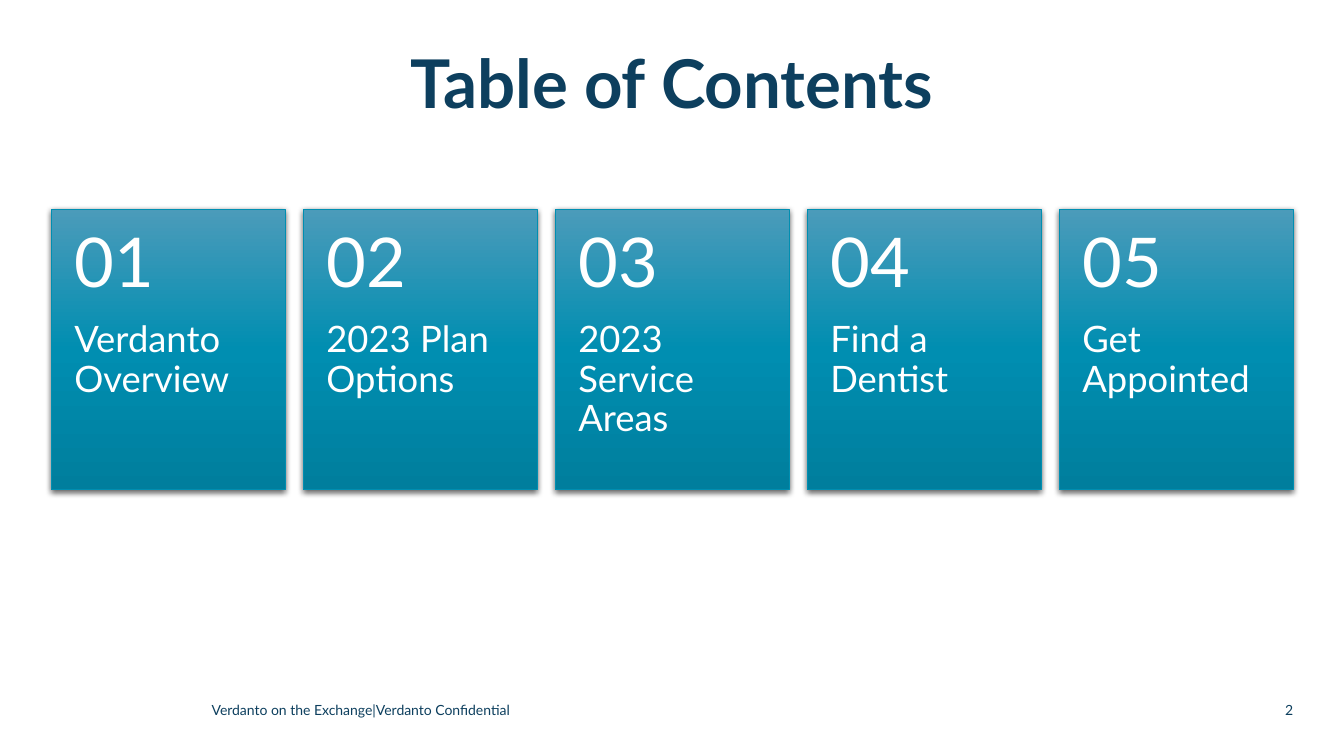
from dataclasses import dataclass

from lxml.etree import SubElement
from pptx import Presentation
from pptx.dml.color import RGBColor
from pptx.enum.shapes import MSO_SHAPE as Shape
from pptx.enum.text import MSO_ANCHOR as Anchor, MSO_AUTO_SIZE as AutoSize, PP_ALIGN as Align
from pptx.oxml import parse_xml
from pptx.oxml.ns import nsdecls, qn
from pptx.util import Pt

NAVY, WHITE, TEAL = "0D3F5E", "FFFFFF", "008EB1"
GRADIENT = {0: "4B9BBA", 50: TEAL, 100: "007E9D"}
CARD_LEFT, CARD_TOP, CARD_PITCH = 36.6, 149.4, 180
CARD_WIDTH, CARD_HEIGHT, NUMBER_HEIGHT = 167.2, 200.4, 80.2
SECTIONS = (
    "Verdanto Overview",
    "2023 Plan Options",
    "2023 Service Areas",
    "Find a Dentist",
    "Get Appointed",
)


@dataclass(frozen=True)
class Box:
    left: float
    top: float
    width: float
    height: float

    def lengths(self) -> tuple:
        return Pt(self.left), Pt(self.top), Pt(self.width), Pt(self.height)


@dataclass(frozen=True)
class Style:
    size: float
    color: str
    bold: bool = False
    align: Align = Align.LEFT
    anchor: Anchor = Anchor.TOP
    insets: tuple = (0, 0, 0, 0)
    line_spacing: float = 1.0


TITLE = Style(48, NAVY, bold=True, align=Align.CENTER, line_spacing=0.9)
PAGE_NUMBER = Style(10, NAVY, align=Align.RIGHT, anchor=Anchor.BOTTOM)
FOOTER = Style(10, NAVY, anchor=Anchor.BOTTOM, insets=(0, 0, 0, 3.6))
LABEL = Style(26, WHITE, insets=(16.5, 0, 16.5, 26), line_spacing=0.9)
NUMBER = Style(49, WHITE, anchor=Anchor.MIDDLE, insets=(16.5, 13, 16.5, 13), line_spacing=0.9)


def rgb(color: str) -> RGBColor:
    return RGBColor.from_string(color)


def write(shape, text: str, style: Style) -> None:
    frame = shape.text_frame
    frame.text = text
    frame.word_wrap = True
    frame.auto_size = AutoSize.NONE
    frame.vertical_anchor = style.anchor
    frame.margin_left, frame.margin_top, frame.margin_right, frame.margin_bottom = map(Pt, style.insets)
    paragraph = frame.paragraphs[0]
    paragraph.alignment = style.align
    paragraph.line_spacing = style.line_spacing
    font = paragraph.font
    font.name, font.size, font.bold = "Lato", Pt(style.size), style.bold
    font.color.rgb = rgb(style.color)


def add_text(shapes, box: Box, text: str, style: Style) -> None:
    write(shapes.add_textbox(*box.lengths()), text, style)


def add_panel(shapes, box: Box) -> None:
    panel = shapes.add_shape(Shape.RECTANGLE, *box.lengths())
    panel.line.color.rgb = rgb(TEAL)
    panel.line.width = Pt(0.5)
    panel.shadow.inherit = False
    properties = panel._element.spPr
    stops = "".join(
        f'<a:gs pos="{position * 1000}"><a:srgbClr val="{color}"/></a:gs>'
        for position, color in GRADIENT.items()
    )
    properties.find(qn("a:prstGeom")).addnext(parse_xml(
        f'<a:gradFill {nsdecls("a")} rotWithShape="1"><a:gsLst>{stops}</a:gsLst>'
        '<a:lin ang="5400000" scaled="0"/></a:gradFill>'
    ))
    shadow = SubElement(
        properties.find(qn("a:effectLst")), qn("a:outerShdw"),
        blurRad=str(Pt(4.5)), dist=str(Pt(1.5)), dir="5400000", algn="ctr", rotWithShape="0",
    )
    shadow_color = SubElement(shadow, qn("a:srgbClr"), val="000000")
    SubElement(shadow_color, qn("a:alpha"), val="63000")


def add_card(shapes, index: int, label: str) -> None:
    left = CARD_LEFT + index * CARD_PITCH
    label_box = Box(left, CARD_TOP + NUMBER_HEIGHT, CARD_WIDTH, CARD_HEIGHT - NUMBER_HEIGHT)
    add_panel(shapes, Box(left, CARD_TOP, CARD_WIDTH, CARD_HEIGHT))
    add_text(shapes, label_box, label, LABEL)
    add_text(shapes, Box(left, CARD_TOP, CARD_WIDTH, NUMBER_HEIGHT), f"{index + 1:02}", NUMBER)


def main() -> None:
    """Build the table of contents slide."""
    presentation = Presentation()
    presentation.slide_width, presentation.slide_height = Pt(960), Pt(540)
    slide = presentation.slides.add_slide(presentation.slide_layouts[5])
    title = slide.shapes.title
    title.left, title.top, title.width, title.height = Box(36, 36, 888, 63.4).lengths()
    write(title, "Table of Contents", TITLE)
    add_text(slide.shapes, Box(887, 484.6, 36.7, 28.8), "2", PAGE_NUMBER)
    add_text(slide.shapes, Box(151.2, 488.2, 486.7, 28.8),
             "Verdanto on the Exchange|Verdanto Confidential", FOOTER)
    cards = slide.shapes.add_group_shape()
    for index, label in enumerate(SECTIONS):
        add_card(cards.shapes, index, label)
    presentation.save("out.pptx")


if __name__ == "__main__":
    main()
